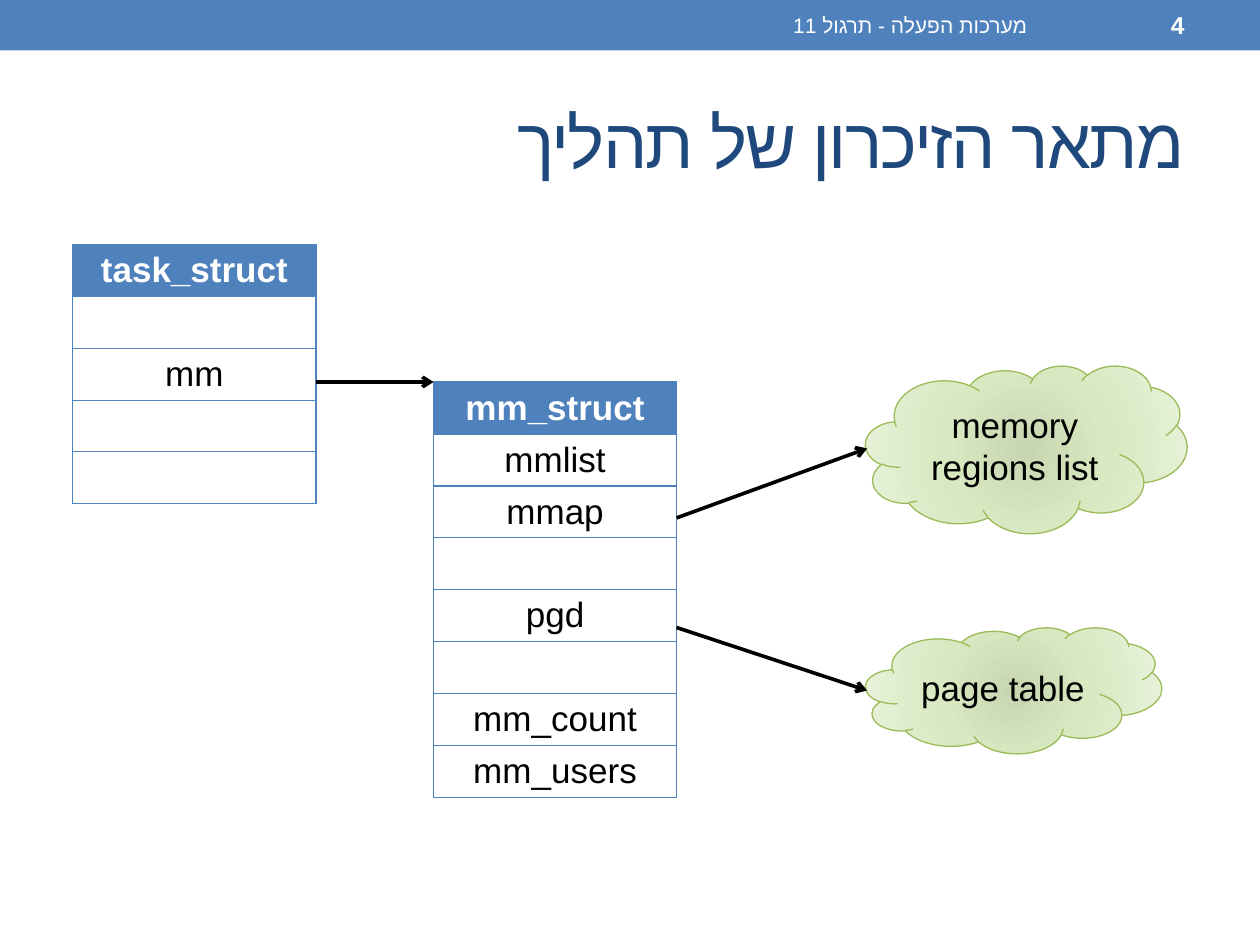
from dataclasses import dataclass

from lxml.etree import SubElement
from pptx import Presentation
from pptx.dml.color import RGBColor
from pptx.enum.shapes import MSO_CONNECTOR, MSO_SHAPE
from pptx.enum.text import MSO_ANCHOR, PP_ALIGN
from pptx.oxml import parse_xml
from pptx.oxml.ns import nsdecls, qn
from pptx.util import Cm, Pt

FONT = "Arial"
BLUE = "4F81BD"
NAVY = "1F497D"
GREEN = "9BBB59"
WHITE = "FFFFFF"
BLACK = "000000"
CLOUD_STOPS = ((0, "C8D7B2"), (45, "D8E8C0"), (100, "E9F3DC"))
ROW_HEIGHT = 1.04
STRUCT_WIDTH = 4.9


@dataclass
class Struct:
    left: float
    top: float
    rows: list[str]


@dataclass
class Cloud:
    text: str
    left: float
    top: float
    width: float
    height: float


@dataclass
class Arrow:
    start: tuple[float, float]
    end: tuple[float, float]


STRUCTS = [
    Struct(1.47, 4.93, ["task_struct", "", "mm", "", ""]),
    Struct(8.74, 7.7, ["mm_struct", "mmlist", "mmap", "", "pgd", "", "mm_count", "mm_users"]),
]
CLOUDS = [
    Cloud("memory regions list", 17.45, 7.37, 6.48, 3.38),
    Cloud("page table", 17.45, 12.65, 5.97, 2.54),
]
ARROWS = [
    Arrow((6.38, 7.7), (8.74, 7.7)),
    Arrow((13.64, 10.44), (17.48, 9.04)),
    Arrow((13.64, 12.65), (17.48, 13.92)),
]


def color(value: str) -> RGBColor:
    return RGBColor.from_string(value)


def write(frame, text: str, *, size=20, ink=BLACK, bold=False,
          align=PP_ALIGN.CENTER, rtl=False, spacing=0) -> None:
    frame.word_wrap = True
    frame.vertical_anchor = MSO_ANCHOR.MIDDLE
    para = frame.paragraphs[0]
    para.alignment = align
    if rtl:
        para._p.get_or_add_pPr().set("rtl", "1")
    span = para.add_run()
    span.text = text
    span.font.name = FONT
    span.font.size = Pt(size)
    span.font.bold = bold
    span.font.color.rgb = color(ink)
    properties = span._r.get_or_add_rPr()
    SubElement(properties, qn("a:cs")).set("typeface", FONT)
    if spacing:
        properties.set("spc", str(spacing * 100))


def add_header(page, deck) -> None:
    band = page.shapes.add_shape(MSO_SHAPE.RECTANGLE, 0, 0, deck.slide_width, Cm(1.02))
    band.shadow.inherit = False
    band.fill.solid()
    band.fill.fore_color.rgb = color(BLUE)
    band.line.fill.background()
    labels = (("מערכות הפעלה - תרגול 11", 9.53, 11.43, 12, False), ("4", 21.16, 2.97, 14, True))
    for text, left, width, size, bold in labels:
        box = page.shapes.add_textbox(Cm(left), Cm(0.05), Cm(width), Cm(0.91))
        write(box.text_frame, text, size=size, ink=WHITE, bold=bold,
              align=PP_ALIGN.RIGHT, rtl=True)


def add_title(page, text: str) -> None:
    title = page.shapes.title
    title.left, title.top, title.width, title.height = Cm(1.27), Cm(1.47), Cm(22.86), Cm(2.74)
    write(title.text_frame, text, size=40, ink=NAVY, align=PP_ALIGN.RIGHT, rtl=True, spacing=-1)


def add_borders(cell) -> None:
    properties = cell._tc.get_or_add_tcPr()
    for index, side in enumerate(("lnL", "lnR", "lnT", "lnB")):
        properties.insert(index, parse_xml(
            f'<a:{side} {nsdecls("a")} w="{Pt(0.75)}"><a:solidFill>'
            f'<a:srgbClr val="{BLUE}"/></a:solidFill></a:{side}>'))


def add_struct(page, struct: Struct) -> None:
    count = len(struct.rows)
    table = page.shapes.add_table(count, 1, Cm(struct.left), Cm(struct.top),
                                  Cm(STRUCT_WIDTH), Cm(ROW_HEIGHT * count)).table
    table.horz_banding = False
    for index, text in enumerate(struct.rows):
        table.rows[index].height = Cm(ROW_HEIGHT)
        cell = table.cell(index, 0)
        header = index == 0
        cell.margin_top = cell.margin_bottom = Cm(0.1)
        cell.vertical_anchor = MSO_ANCHOR.MIDDLE
        cell.fill.solid()
        cell.fill.fore_color.rgb = color(BLUE if header else WHITE)
        add_borders(cell)
        if text:
            write(cell.text_frame, text, ink=WHITE if header else BLACK, bold=header)


def add_cloud(page, cloud: Cloud) -> None:
    shape = page.shapes.add_shape(MSO_SHAPE.CLOUD, Cm(cloud.left), Cm(cloud.top),
                                  Cm(cloud.width), Cm(cloud.height))
    shape.shadow.inherit = False
    shape.line.color.rgb = color(GREEN)
    shape.line.width = Pt(0.75)
    stops = "".join(f'<a:gs pos="{position * 1000}"><a:srgbClr val="{value}"/></a:gs>'
                    for position, value in CLOUD_STOPS)
    gradient = parse_xml(
        f'<a:gradFill {nsdecls("a")} rotWithShape="1"><a:gsLst>{stops}</a:gsLst>'
        '<a:path path="circle"><a:fillToRect l="100000" t="100000" r="100000" b="100000"/>'
        '</a:path></a:gradFill>')
    shape._element.spPr.find(qn("a:prstGeom")).addnext(gradient)
    write(shape.text_frame, cloud.text)


def add_arrow(page, arrow: Arrow) -> None:
    points = [Cm(value) for value in (*arrow.start, *arrow.end)]
    connector = page.shapes.add_connector(MSO_CONNECTOR.STRAIGHT, *points)
    connector.line.color.rgb = color(BLACK)
    connector.line.width = Pt(2.08)
    SubElement(connector.line._get_or_add_ln(), qn("a:tailEnd")).set("type", "arrow")
    SubElement(connector._element.spPr, qn("a:effectLst"))


def main() -> None:
    deck = Presentation()
    deck.slide_width, deck.slide_height = Cm(25.4), Cm(19.05)
    page = deck.slides.add_slide(deck.slide_layouts[5])
    add_header(page, deck)
    add_title(page, "מתאר הזיכרון של תהליך")
    for struct in STRUCTS:
        add_struct(page, struct)
    for cloud in CLOUDS:
        add_cloud(page, cloud)
    for arrow in ARROWS:
        add_arrow(page, arrow)
    deck.save("out.pptx")


if __name__ == "__main__":
    main()
